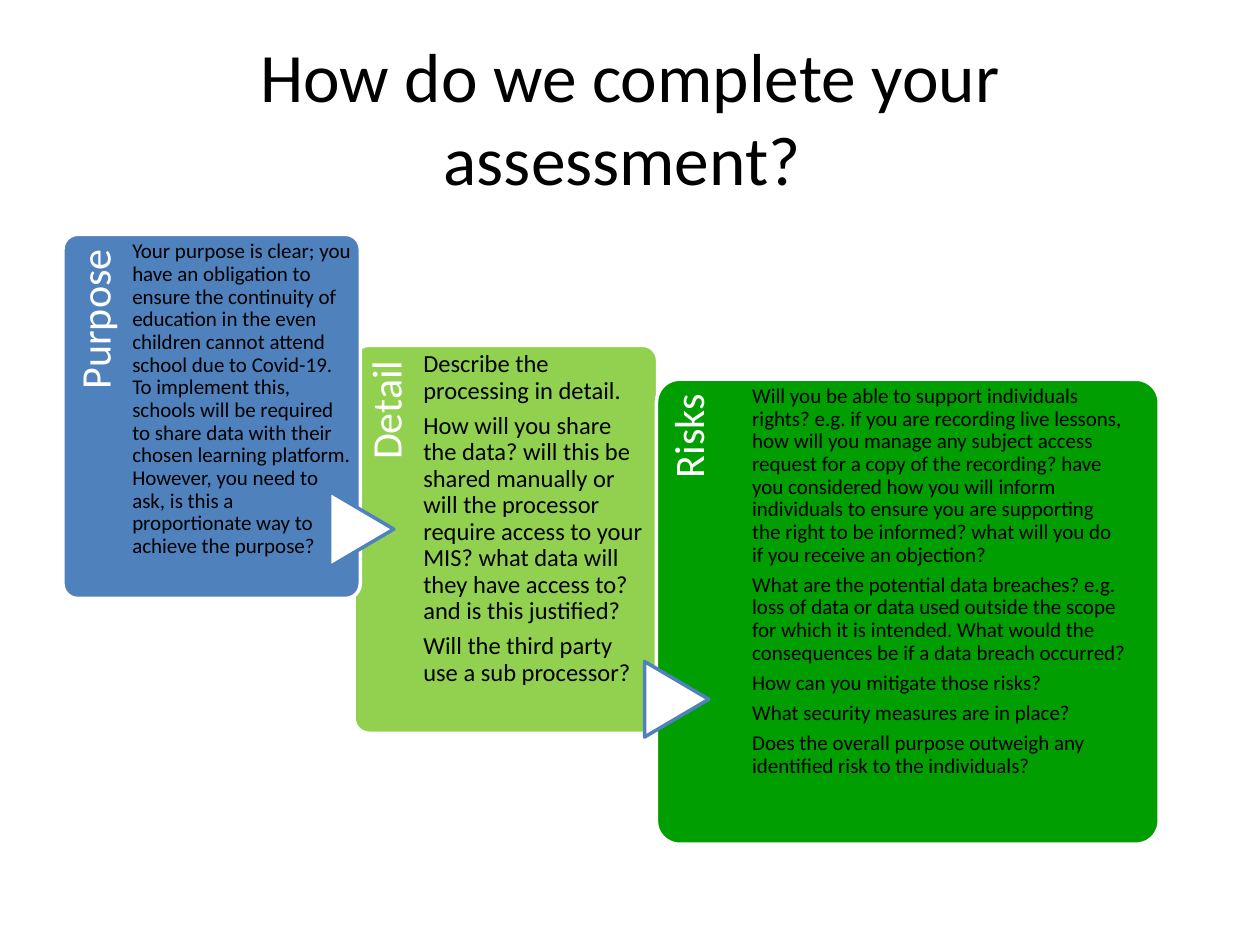
from pptx import Presentation
from pptx.dml.color import RGBColor
from pptx.enum.shapes import MSO_SHAPE
from pptx.enum.text import MSO_ANCHOR, PP_ALIGN
from pptx.util import Inches, Pt

ROUNDED, TRIANGLE = MSO_SHAPE.ROUNDED_RECTANGLE, MSO_SHAPE.FLOWCHART_EXTRACT
TOP, MIDDLE = MSO_ANCHOR.TOP, MSO_ANCHOR.MIDDLE
LEFT, CENTER, RIGHT = PP_ALIGN.LEFT, PP_ALIGN.CENTER, PP_ALIGN.RIGHT

# Content, in stacking order
TITLE = "How do we complete your assessment? "
CARDS = [
    {"label": "Detail", "box": (2.81, 2.74, 2.41, 3.08), "fill": "92D050",
     "indent": 0.55, "size": 14, "body": [
         "Describe the processing in detail.",
         "How will you share the data? will this be shared manually or will the "
         "processor require access to your MIS? what data will they have access "
         "to? and is this justified?",
         "Will the third party use a sub processor?"]},
    {"label": "Purpose", "box": (0.5, 1.86, 2.36, 2.89), "fill": "4F81BD",
     "indent": 0.55, "size": 12, "body": [
         "Your purpose is clear; you have an obligation to ensure the continuity "
         "of education in the even children cannot attend school due to Covid-19. "
         "To implement this, schools will be required to share data with their "
         "chosen learning platform. However, you need to ask, is this a "
         "proportionate way to achieve the purpose?"]},
    {"label": "Risks", "box": (5.21, 3.01, 3.99, 3.69), "fill": "009E00",
     "indent": 0.76, "size": 12, "body": [
         "Will you be able to support individuals rights? e.g. if you are "
         "recording live lessons, how will you manage any subject access request "
         "for a copy of the recording? have you considered how you will inform "
         "individuals to ensure you are supporting the right to be informed? "
         "what will you do if you receive an objection?",
         "What are the potential data breaches? e.g. loss of data or data used "
         "outside the scope for which it is intended. What would the "
         "consequences be if a data breach occurred?",
         "How can you mitigate those risks?",
         "What security measures are in place?",
         "Does the overall purpose outweigh any identified risk to the individuals?"]},
]
ARROW_CENTERS = [(2.87, 4.2), (5.37, 5.55)]

THEME = {"font": "Calibri", "text": "000000", "light": "FFFFFF", "accent": "4F81BD",
         "title_size": 39.6, "label_size": 24, "line_width": 2}
ARROW_WIDTH, ARROW_HEIGHT = 0.6, 0.51
LABEL_WIDTH, LABEL_HEIGHT, BODY_WIDTH = 0.2, 0.82, 0.745  # shares of a card

presentation = Presentation()
presentation.slide_width, presentation.slide_height = Inches(10), Inches(7.5)
slide = presentation.slides.add_slide(presentation.slide_layouts[6])


def set_values(target, values):
    for name, value in values.items():
        setattr(target, name, value)


def add_shape(kind, box, fill, line):
    shape = slide.shapes.add_shape(kind, *map(Inches, box))
    shape.shadow.inherit = False
    shape.fill.solid()
    shape.fill.fore_color.rgb = RGBColor.from_string(fill)
    shape.line.color.rgb = RGBColor.from_string(line)
    shape.line.width = Pt(THEME["line_width"])
    return shape


def add_text(box, lines, size, color, margins, paragraph_format, anchor=TOP):
    shape = slide.shapes.add_textbox(*map(Inches, box))
    frame = shape.text_frame
    sides = ("margin_left", "margin_top", "margin_right", "margin_bottom")
    set_values(frame, dict(zip(sides, map(Inches, margins))))
    set_values(frame, {"word_wrap": True, "vertical_anchor": anchor})
    for index, line in enumerate(lines):
        paragraph = frame.paragraphs[0] if index == 0 else frame.add_paragraph()
        paragraph.text = line
        set_values(paragraph, paragraph_format)
        set_values(paragraph.font, {"name": THEME["font"], "size": Pt(size)})
        paragraph.font.color.rgb = RGBColor.from_string(color)
    return shape


def centered_box(center_x, center_y, width, height):
    return center_x - width / 2, center_y - height / 2, width, height


def add_card(card):
    left, top, width, height = card["box"]
    panel = add_shape(ROUNDED, card["box"], card["fill"], THEME["light"])
    panel.adjustments[0] = 0.05

    # Label turned to read upwards along the left side
    strip, length = width * LABEL_WIDTH, height * LABEL_HEIGHT
    label = add_text(centered_box(left + strip / 2, top + length / 2, length, strip),
                     [card["label"]], THEME["label_size"], THEME["light"],
                     (0, 0.09, 0.12, 0), {"alignment": RIGHT, "line_spacing": 0.9})
    label.rotation = 270

    add_text((left + card["indent"], top, width * BODY_WIDTH, height),
             card["body"], card["size"], THEME["text"], (0, 0.05, 0, 0),
             {"alignment": LEFT, "line_spacing": 0.9,
              "space_after": Pt(round(card["size"] * 0.35, 1))})


# Title
add_text((0.5, 0.3, 9, 1.25), [TITLE], THEME["title_size"], THEME["text"],
         (0.1, 0.05, 0.1, 0.05), {"alignment": CENTER}, MIDDLE)

# Cards, then the arrows that lead from one to the next
for card in CARDS:
    add_card(card)
for center in ARROW_CENTERS:
    arrow = add_shape(TRIANGLE, centered_box(*center, ARROW_WIDTH, ARROW_HEIGHT),
                      THEME["light"], THEME["accent"])
    arrow.rotation = 90

presentation.save("out.pptx")
